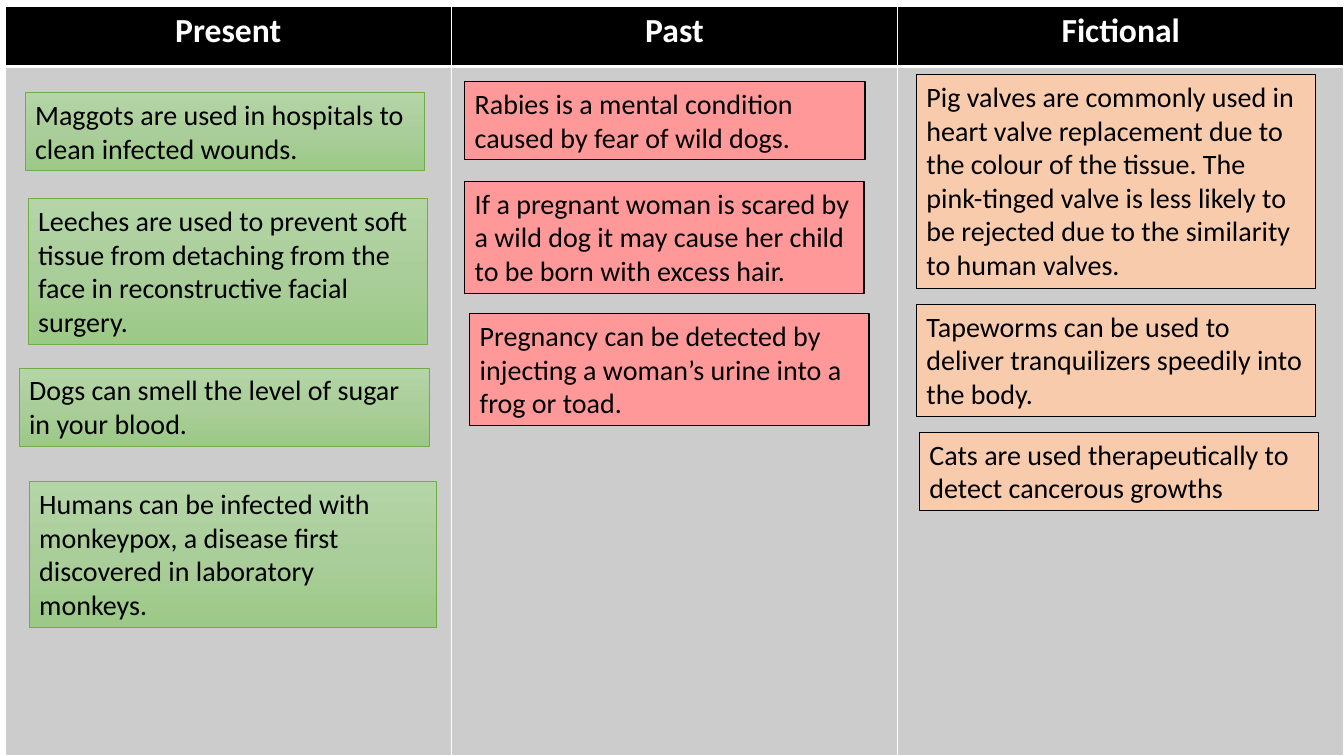
from copy import deepcopy
from dataclasses import dataclass
from typing import Any

from lxml.etree import SubElement
from pptx import Presentation
from pptx.dml.color import RGBColor as Rgb
from pptx.enum.shapes import MSO_SHAPE as Shape
from pptx.enum.text import MSO_ANCHOR as Anchor, MSO_AUTO_SIZE as Auto, PP_ALIGN as Align
from pptx.oxml.ns import qn
from pptx.util import Inches, Pt


@dataclass(frozen=True)
class Theme:
    face: str = "Calibri"
    head_size: int = 24
    body_size: int = 20
    black: str = "000000"
    white: str = "FFFFFF"
    grey: str = "CCCCCC"


@dataclass(frozen=True)
class Style:
    fill: tuple[str, ...]  # one colour, or three from top to bottom
    line: str
    weight: float


@dataclass(frozen=True)
class Card:
    left: float
    top: float
    width: float
    rows: int
    text: str


@dataclass(frozen=True)
class Column:
    title: str
    style: Style
    cards: tuple[Card, ...]


THEME = Theme()
GREEN = Style(("B5D5A7", "AACE9A", "9CC987"), "70AD47", 0.5)
PINK = Style(("FF9999",), THEME.black, 1)
PEACH = Style(("F8CBAD",), THEME.black, 1)

BOARD = (
    Column("Present", GREEN, (
        Card(0.25, 0.92, 3.96, 2, "Maggots are used in hospitals to clean infected wounds."),
        Card(0.28, 1.97, 3.96, 4, "Leeches are used to prevent soft tissue from detaching "
             "from the face in reconstructive facial surgery."),
        Card(0.19, 3.65, 4.07, 2, "Dogs can smell the level of sugar in your blood."),
        Card(0.29, 4.78, 4.04, 4, "Humans can be infected with monkeypox, a disease first "
             "discovered in laboratory monkeys."),
    )),
    Column("Past", PINK, (
        Card(4.61, 0.81, 3.97, 2, "Rabies is a mental condition caused by fear of wild dogs."),
        Card(4.61, 1.8, 3.96, 3, "If a pregnant woman is scared by a wild dog it may cause "
             "her child to be born with excess hair."),
        Card(4.66, 3.11, 3.96, 3, "Pregnancy can be detected by injecting a woman’s urine "
             "into a frog or toad."),
    )),
    Column("Fictional", PEACH, (
        Card(9.09, 0.74, 3.96, 6, "Pig valves are commonly used in heart valve replacement due "
             "to the colour of the tissue. The pink-tinged valve is less likely to be rejected "
             "due to the similarity to human valves."),
        Card(9.09, 3.02, 3.96, 3, "Tapeworms can be used to deliver tranquilizers speedily "
             "into the body."),
        Card(9.12, 4.29, 3.96, 2, "Cats are used therapeutically to detect cancerous growths"),
    )),
)


def apply(target: Any, values: dict[str, Any]) -> None:
    for key, value in values.items():
        setattr(target, key, value)


def write(frame: Any, text: str, align: Align, size: int, tint: str, bold: bool) -> None:
    par = frame.paragraphs[0]
    par.alignment = align
    run = par.add_run()
    run.text = text
    apply(run.font, {"name": THEME.face, "size": Pt(size), "bold": bold})
    run.font.color.rgb = Rgb.from_string(tint)


def paint(fill: Any, tint: str) -> None:
    fill.solid()
    fill.fore_color.rgb = Rgb.from_string(tint)


def blend(shape: Any, tints: tuple[str, ...]) -> None:
    """Fill the shape with a top-down gradient of evenly spaced colours."""
    shape.fill.gradient()
    shape.fill.gradient_angle = 270
    stops = next(shape._element.spPr.iter(qn("a:gsLst")))
    for _ in tints[2:]:
        stops.insert(1, deepcopy(stops[0]))
    for num, (stop, tint) in enumerate(zip(shape.fill.gradient_stops, tints)):
        stop.position = num / (len(tints) - 1)
        stop.color.rgb = Rgb.from_string(tint)


def border(cell: Any, widths: dict[str, float]) -> None:
    """Draw white cell edges; call before the cell is filled."""
    props = cell._tc.get_or_add_tcPr()
    for side, width in widths.items():
        edge = SubElement(props, qn(f"a:ln{side}"), w=str(Pt(width)))
        SubElement(SubElement(edge, qn("a:solidFill")), qn("a:srgbClr"), val=THEME.white)


def add_grid(slide: Any, board: tuple[Column, ...]) -> None:
    place = map(Inches, (0.05, 0.06, 13.28, 7.44))
    table = slide.shapes.add_table(2, len(board), *place).table
    for row, height in zip(table.rows, (0.6, 6.84)):
        row.height = Inches(height)
    for num, column in enumerate(board):
        head, body = table.cell(0, num), table.cell(1, num)
        border(head, {"L": 1, "R": 1, "T": 1, "B": 3})
        border(body, {"L": 1, "R": 1, "T": 3, "B": 1})
        paint(head.fill, THEME.black)
        paint(body.fill, THEME.grey)
        write(head.text_frame, column.title, Align.CENTER, THEME.head_size, THEME.white, True)


def add_card(slide: Any, card: Card, style: Style) -> None:
    height = 0.1 + card.rows * 0.337
    place = map(Inches, (card.left, card.top, card.width, height))
    shape = slide.shapes.add_shape(Shape.RECTANGLE, *place)
    shape.shadow.inherit = False
    if len(style.fill) > 1:
        blend(shape, style.fill)
    else:
        paint(shape.fill, style.fill[0])
    shape.line.color.rgb = Rgb.from_string(style.line)
    shape.line.width = Pt(style.weight)
    apply(shape.text_frame, {
        "word_wrap": True,
        "auto_size": Auto.SHAPE_TO_FIT_TEXT,
        "vertical_anchor": Anchor.TOP,
    })
    write(shape.text_frame, card.text, Align.LEFT, THEME.body_size, THEME.black, False)


def main() -> None:
    deck = Presentation()
    apply(deck, {"slide_width": Inches(13.33), "slide_height": Inches(7.5)})
    slide = deck.slides.add_slide(deck.slide_layouts[6])
    add_grid(slide, BOARD)
    for column in BOARD:
        for card in column.cards:
            add_card(slide, card, column.style)
    deck.save("out.pptx")


if __name__ == "__main__":
    main()
